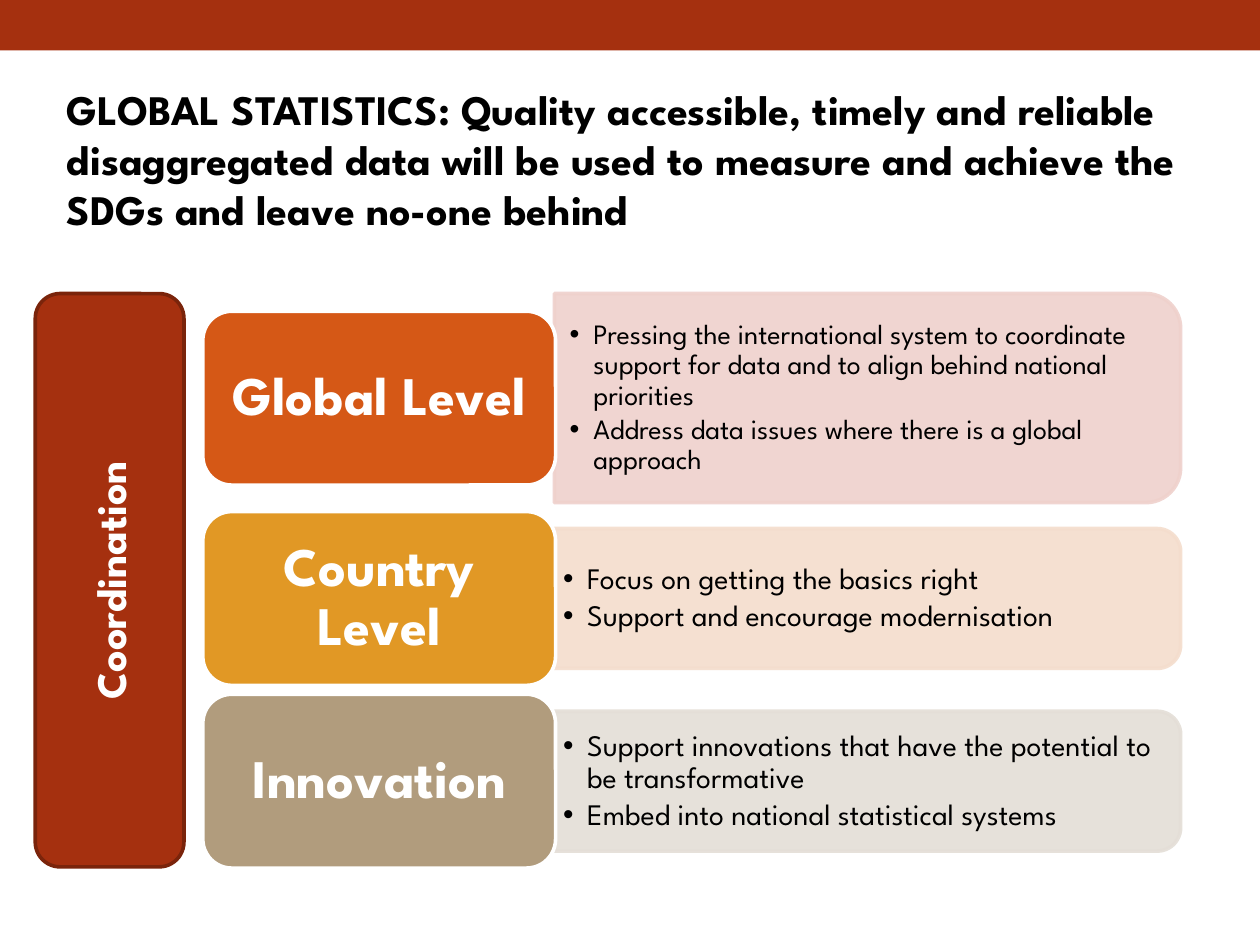
from lxml.etree import SubElement
from pptx import Presentation
from pptx.dml.color import RGBColor
from pptx.enum.shapes import MSO_SHAPE as Preset
from pptx.enum.text import MSO_ANCHOR as Anchor, MSO_AUTO_SIZE as AutoSize, PP_ALIGN as Align
from pptx.oxml.ns import qn
from pptx.util import Inches, Pt

CARD_LEFT, CARD_WIDTH, CARD_HEIGHT = 1.61, 2.8, 1.38
PANEL_LEFT, PANEL_WIDTH = 4.4, 4.97

LEVELS = [
    {"name": "Global Level", "top": 2.47, "card": "D55816", "panel": "EFD1CC",
     "depth": 1.66, "size": 16, "width": 4.88, "inset": 0.12,
     "points": ["Pressing the international system to coordinate support for data "
                "and to align behind national priorities",
                "Address data issues where there is a global approach"]},
    {"name": "Country Level", "top": 4.06, "card": "E19825", "panel": "F4DDCD",
     "depth": 1.11, "size": 17, "width": 4.92, "inset": 0.07,
     "points": ["Focus on getting the basics right",
                "Support and encourage modernisation"]},
    {"name": "Innovation", "top": 5.51, "card": "B19C7D", "panel": "E4DED7",
     "depth": 1.11, "size": 17, "width": 4.92, "inset": 0.07,
     "points": ["Support innovations that have the potential to be transformative",
                "Embed into national statistical systems"]},
]


def color(value):
    return RGBColor.from_string(value)


def apply(target, values):
    for name, value in values.items():
        setattr(target, name, value)


class SlideBuilder:
    font = "League Spartan"
    line_width = Pt(2.08)

    def __init__(self, page):
        self.page = page

    def shape(self, preset, left, top, width, height, fill, line=None):
        box = self.page.shapes.add_shape(
            preset, Inches(left), Inches(top), Inches(width), Inches(height))
        box.shadow.inherit = False
        box.fill.solid()
        box.fill.fore_color.rgb = color(fill)
        if line:
            box.line.color.rgb = color(line)
            box.line.width = self.line_width
        else:
            box.line.fill.background()
        return box

    def frame(self, box, inset_x, inset_y, anchor):
        apply(box.text_frame, {
            "word_wrap": True, "auto_size": AutoSize.NONE, "vertical_anchor": anchor,
            "margin_left": Inches(inset_x), "margin_right": Inches(inset_x),
            "margin_top": Inches(inset_y), "margin_bottom": Inches(inset_y)})
        return box.text_frame

    def text(self, para, words, size, fill, bold, **layout):
        apply(para, {"space_before": Pt(0), "space_after": Pt(0), **layout})
        span = para.add_run()
        span.text = words
        apply(span.font, {"name": self.font, "size": Pt(size), "bold": bold})
        span.font.color.rgb = color(fill)

    def place(self, box, left, top, width, height):
        apply(box, {"left": Inches(left), "top": Inches(top),
                    "width": Inches(width), "height": Inches(height)})
        box._element.getparent().append(box._element)

    def title(self, words, left, top, width, height):
        box = self.page.shapes.title
        self.place(box, left, top, width, height)
        frame = self.frame(box, 0.1, 0.05, Anchor.TOP)
        self.text(frame.paragraphs[0], words, 24, "000000", True,
                  alignment=Align.LEFT, line_spacing=1.0)

    def card(self, words, left, top, width, height, fill, line, size, spacing=1.0):
        box = self.shape(Preset.ROUNDED_RECTANGLE, left, top, width, height, fill, line)
        frame = self.frame(box, 0.13, 0.06, Anchor.MIDDLE)
        self.text(frame.paragraphs[0], words, size, "FFFFFF", True,
                  alignment=Align.CENTER, line_spacing=spacing)
        return box

    def panel(self, middle, depth, fill):
        center = PANEL_LEFT + PANEL_WIDTH / 2
        box = self.shape(Preset.ROUND_2_SAME_RECTANGLE, center - depth / 2,
                         middle - PANEL_WIDTH / 2, depth, PANEL_WIDTH, fill, fill)
        box.rotation = 90
        for tint in box._element.spPr.iter(qn("a:srgbClr")):
            SubElement(tint, qn("a:alpha"), val="90000")

    def bullets(self, box, points, middle, depth, width, size, inset):
        height = depth * 0.9
        self.place(box, PANEL_LEFT, middle - height / 2, width, height)
        frame = self.frame(box, inset, inset / 2, Anchor.MIDDLE)
        for index, point in enumerate(points):
            para = frame.add_paragraph() if index else frame.paragraphs[0]
            self.text(para, point, size, "000000", False, level=1, alignment=Align.LEFT,
                      line_spacing=0.9, space_after=Pt(size * 0.15))
            props = para._p.get_or_add_pPr()
            props.set("marL", str(Inches(0.19)))
            props.set("indent", str(Inches(-0.19)))
            SubElement(props, qn("a:buFont"), typeface="Arial")
            SubElement(props, qn("a:buChar"), char="•")

    def level(self, box, item):
        middle = item["top"] + CARD_HEIGHT / 2
        self.panel(middle, item["depth"], item["panel"])
        self.bullets(box, item["points"], middle, item["depth"],
                     item["width"], item["size"], item["inset"])
        self.card(item["name"], CARD_LEFT, item["top"], CARD_WIDTH, CARD_HEIGHT,
                  item["card"], "FFFFFF", 31, 0.9)


def main():
    deck = Presentation()
    apply(deck, {"slide_width": Inches(10), "slide_height": Inches(7.5)})
    page = deck.slides.add_slide(deck.slide_layouts.get_by_name("Comparison"))
    builder = SlideBuilder(page)
    bodies = [box for box in page.placeholders if box.placeholder_format.idx]

    builder.shape(Preset.RECTANGLE, 0, 0, 10, 0.4, "A5300F")
    for box, item in zip(bodies, LEVELS):
        builder.level(box, item)
    for box in bodies[len(LEVELS):]:
        box._element.getparent().remove(box._element)

    pillar = builder.card("Coordination", 0.28, 2.33, 1.18, 4.55, "A5300F", "7A240B", 24)
    pillar.text_frame._txBody.bodyPr.set("vert", "vert270")
    builder.title("GLOBAL STATISTICS: Quality accessible, timely and reliable "
                  "disaggregated data will be used to measure and achieve the SDGs "
                  "and leave no-one behind", 0.43, 0.61, 9.21, 1.31)
    deck.save("out.pptx")


if __name__ == "__main__":
    main()
